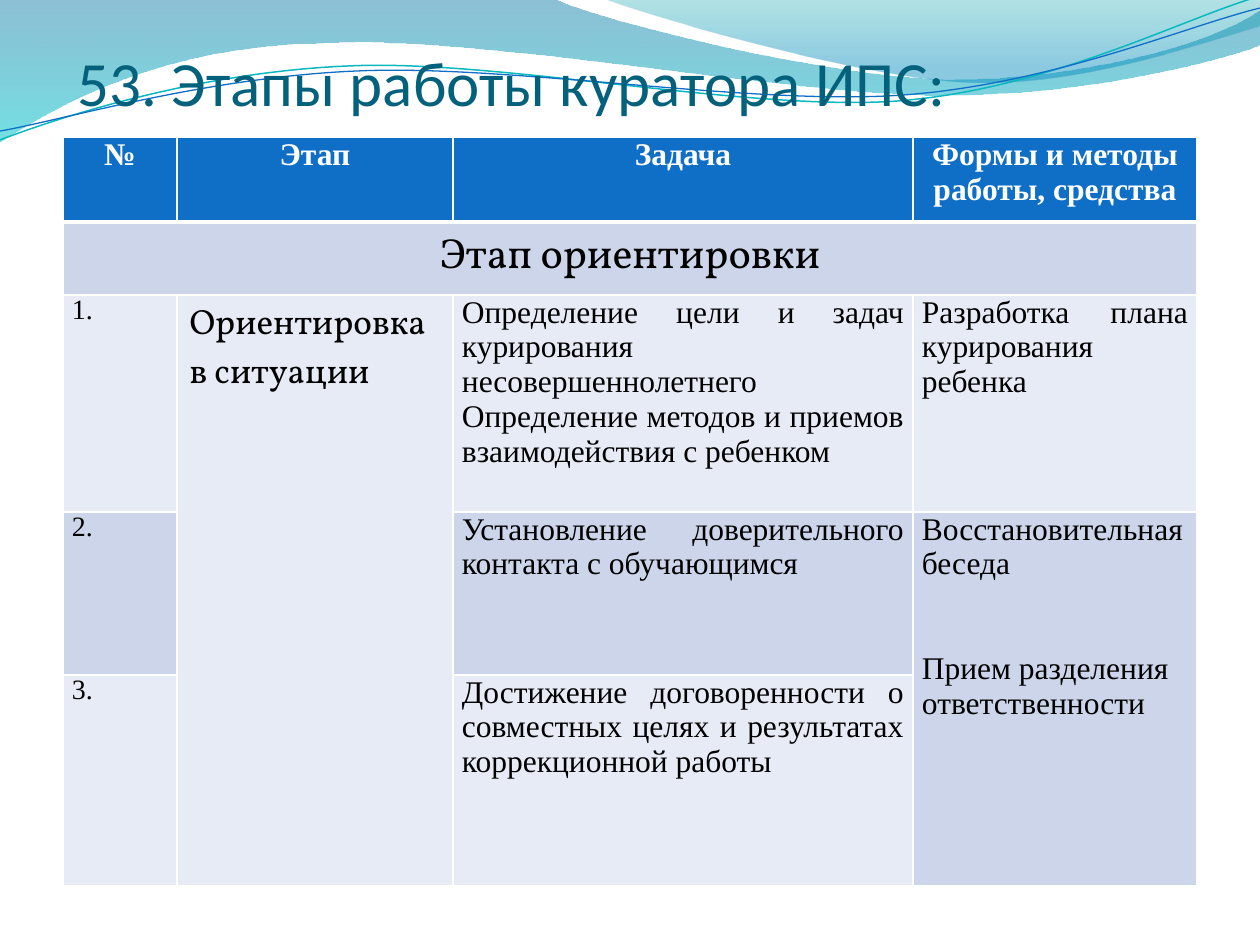
from math import cos, radians, sin

from lxml import etree
from pptx import Presentation
from pptx.dml.color import RGBColor
from pptx.enum.text import MSO_ANCHOR, MSO_AUTO_SIZE, PP_ALIGN
from pptx.oxml.ns import qn
from pptx.util import Pt

PX = 914400 / 126
LEFT, MID, FULL = PP_ALIGN.LEFT, PP_ALIGN.CENTER, PP_ALIGN.JUSTIFY
BOTTOM, NO_FIT = MSO_ANCHOR.BOTTOM, MSO_AUTO_SIZE.NONE
SERIF, BOOK, SANS = "Times New Roman", "Vollkorn", "Calibri"
TILT = 2.7
COLORS = {
    "head": "0F6FC6", "dark": "CCD5EA", "light": "E7EBF5",
    "title": "04617B", "text": "000000", "white": "FFFFFF",
    "sea": "0074A1", "aqua": "00C6CF", "teal": "00A1A9", "sky": "008BBF",
    "cyan": "0AB8BF", "blue": "0F6FC6",
}


def emu(px):
    return round(px * PX)


def color(name):
    return RGBColor.from_string(COLORS[name])


def pairs(part):
    return list(zip(part[::2], part[1::2]))


def turn(parts, mid):
    """Rotate every point clockwise by TILT about mid."""
    c, s = cos(radians(TILT)), sin(radians(TILT))
    turned = []
    for part in parts:
        moves = [(x - mid[0], y - mid[1]) for x, y in pairs(part)]
        turned.append([v for x, y in moves
                       for v in (mid[0] + x * c - y * s, mid[1] + x * s + y * c)])
    return turned


class Deck:
    def __init__(self, width, height):
        self.prs = Presentation()
        self.prs.slide_width, self.prs.slide_height = emu(width), emu(height)
        self.slide = self.prs.slides.add_slide(self.prs.slide_layouts[5])

    def outline(self, parts, close):
        """Each part is a point (2 numbers) or a cubic curve (6 numbers)."""
        ends = [(emu(part[-2]), emu(part[-1])) for part in parts]
        pen = self.slide.shapes.build_freeform(*ends[0], scale=1.0)
        pen.add_line_segments(ends[1:], close=close)
        shape = pen.convert_to_shape()
        shape.shadow.inherit = False
        lines = list(shape.element.spPr.iter(qn("a:lnTo")))
        for line, part in zip(lines, parts[1:]):
            if len(part) == 6:
                bend = etree.Element(qn("a:cubicBezTo"))
                for x, y in pairs(part):
                    etree.SubElement(bend, qn("a:pt"), x=str(emu(x) - shape.left),
                                     y=str(emu(y) - shape.top))
                line.getparent().replace(line, bend)
        return shape

    def band(self, parts, stops):
        """Closed wave; each stop is (position, colour, opacity percent)."""
        shape = self.outline(parts, True)
        shape.line.fill.background()
        shape.fill.gradient()
        shape.fill.gradient_angle = 270
        for stop, (place, name, _) in zip(shape.fill.gradient_stops, stops):
            stop.position = place
            stop.color.rgb = color(name)
        tints = shape.element.spPr.find(qn("a:gradFill")).iter(qn("a:srgbClr"))
        for tint, (_, _, alpha) in zip(tints, stops):
            etree.SubElement(tint, qn("a:alpha"), val=str(alpha * 1000))

    def curve(self, parts, mid, name, width):
        shape = self.outline(turn(parts, mid), False)
        shape.rotation = -TILT
        shape.fill.background()
        shape.line.color.rgb = color(name)
        shape.line.width = Pt(width)

    def style(self, para, face, size, name, align, bold=False):
        font = para.font
        font.name, font.size, font.bold = face, Pt(size), bold
        font.color.rgb = color(name)
        para.alignment = align

    def title(self, text, left, top, width, height):
        shape = self.slide.shapes.title
        self.slide.shapes.element.append(shape.element)  # in front of the waves
        shape.left, shape.top = emu(left), emu(top)
        shape.width, shape.height = emu(width), emu(height)
        frame = shape.text_frame
        frame.text = text
        frame.auto_size, frame.vertical_anchor = NO_FIT, BOTTOM
        frame.margin_left, frame.margin_top = emu(15), emu(6)
        frame.margin_right = frame.margin_bottom = 0
        self.style(frame.paragraphs[0], SANS, 36, "title", LEFT)

    def table(self, left, top, cols, rows):
        frame = self.slide.shapes.add_table(
            len(rows), len(cols), emu(left), emu(top), emu(sum(cols)), emu(sum(rows)))
        grid = frame.table
        for col, width in zip(grid.columns, cols):
            col.width = emu(width)
        for row, height in zip(grid.rows, rows):
            row.height = emu(height)
        return grid

    def cell(self, cell, text, fill, face=SERIF, size=18, name="text",
             align=FULL, bold=False):
        cell.fill.solid()
        cell.fill.fore_color.rgb = color(fill)
        cell.text = text
        if face == SERIF:
            cell.margin_left = cell.margin_right = emu(9)
            cell.margin_top = cell.margin_bottom = 0
        for para in cell.text_frame.paragraphs:
            self.style(para, face, size, name, align, bold)

    def edges(self, cell, widths):
        """White borders; widths maps a side letter to points."""
        props = cell._tc.get_or_add_tcPr()
        for spot, (side, width) in enumerate(widths.items()):
            line = etree.Element(qn(f"a:ln{side}"), w=str(Pt(width)))
            fill = etree.SubElement(line, qn("a:solidFill"))
            etree.SubElement(fill, qn("a:srgbClr"), val=COLORS["white"])
            props.insert(spot, line)


HEADS = ["№", "Этап", "Задача", "Формы и методы работы, средства"]
TASKS = [
    "Определение цели и задач курирования несовершеннолетнего "
    "Определение методов и приемов взаимодействия с ребенком",
    "Установление доверительного контакта с обучающимся",
    "Достижение договоренности о совместных целях и результатах "
    "коррекционной работы",
]


def waves(deck):
    deck.band([(0, 0), (554, -1), (600, 21, 837, 79, 955, 79),
               (1074, 79, 1207, 47, 1260, 11), (1261, 45),
               (1238, 55, 1096, 96, 940, 95), (784, 95, 481, 35, 324, 43),
               (163, 45, 58, 105, -1, 142)],
              [(0, "sea", 45), (1, "aqua", 55)])
    deck.band([(604, -1), (641, 14, 859, 78, 969, 82),
               (1079, 87, 1211, 40, 1260, 26), (1260, 0)],
              [(0, "teal", 30), (0.8, "sky", 45)])
    deck.curve([(0, 140), (60, 117, 199, 72, 349, 66),
                (498, 59, 747, 112, 898, 101),
                (1050, 89, 1182, 19, 1257, -3)], (629, 72), "cyan", 0.85)
    deck.curve([(0, 131), (59, 121, 207, 77, 357, 71),
                (508, 64, 752, 106, 903, 95),
                (1053, 84, 1186, 26, 1260, 8)], (629, 74), "blue", 0.75)


def stages(deck):
    grid = deck.table(63, 137, [114, 276, 460, 284], [85, 73, 217, 163, 211])
    for col, head in enumerate(HEADS):
        cell = grid.cell(0, col)
        deck.cell(cell, head, "head", name="white", align=MID, bold=True)
        deck.edges(cell, {"L": 1, "R": 1, "T": 1, "B": 3})

    for first, last in (((1, 0), (1, 3)), ((2, 1), (4, 1)), ((3, 3), (4, 3))):
        grid.cell(*first).merge(grid.cell(*last))
    deck.cell(grid.cell(1, 0), "Этап ориентировки", "dark", BOOK, 24, align=MID)
    deck.cell(grid.cell(2, 1), "Ориентировка в ситуации", "light", BOOK, 20, align=LEFT)

    for num, task in enumerate(TASKS, 1):
        fill = "light" if num % 2 else "dark"
        deck.cell(grid.cell(num + 1, 0), f"{num}.", fill, size=16)
        deck.cell(grid.cell(num + 1, 2), task, fill)

    deck.cell(grid.cell(2, 3), "Разработка плана курирования ребенка", "light")
    forms = grid.cell(3, 3)
    deck.cell(forms, "Восстановительная беседа\nПрием разделения ответственности", "dark")
    share = forms.text_frame.paragraphs[1]
    share.alignment, share.space_before = LEFT, Pt(40)


def main():
    deck = Deck(1260, 945)
    waves(deck)
    deck.title("53. Этапы работы куратора ИПС:", 63, 38, 1134, 81)
    stages(deck)
    deck.prs.save("out.pptx")


if __name__ == "__main__":
    main()
